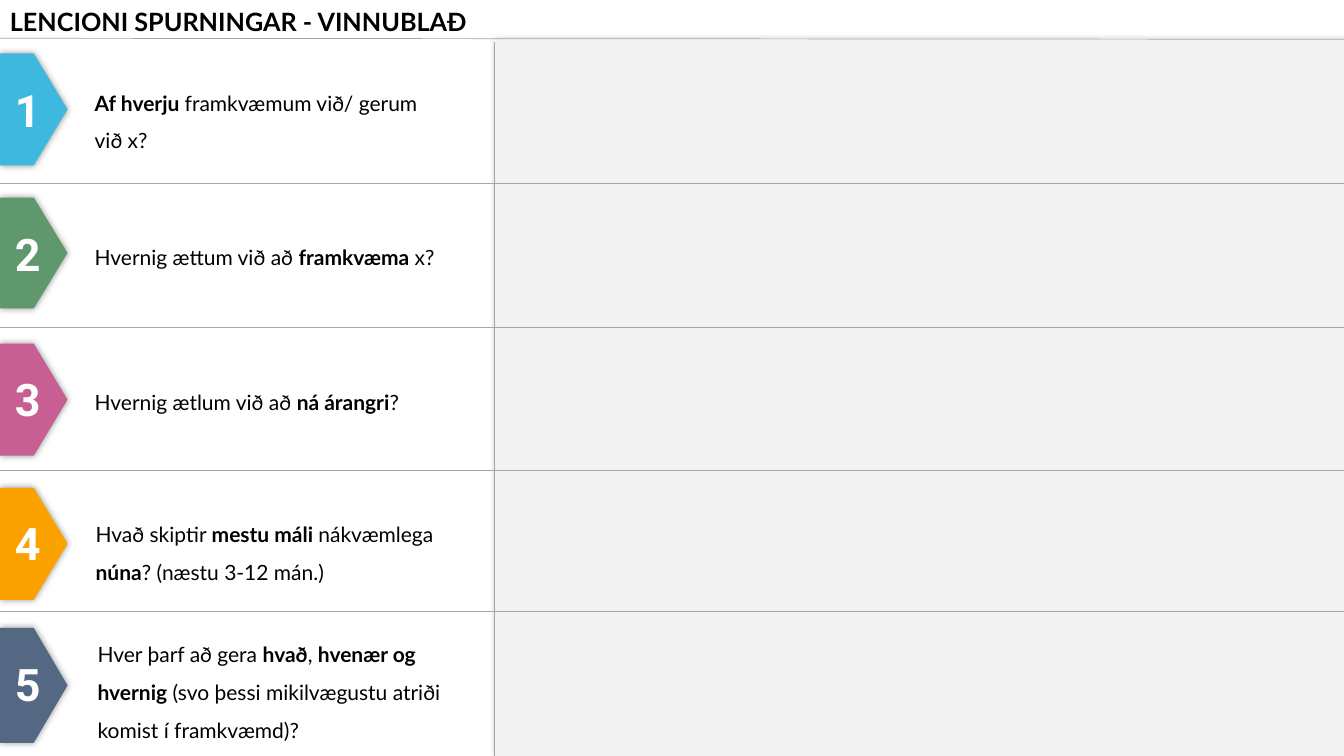
from dataclasses import dataclass

from lxml.etree import SubElement
from pptx import Presentation
from pptx.dml.color import RGBColor
from pptx.enum.shapes import MSO_CONNECTOR, MSO_SHAPE
from pptx.oxml.ns import qn
from pptx.shapes.autoshape import Shape
from pptx.slide import Slide
from pptx.text.text import _Paragraph as Paragraph
from pptx.util import Inches, Pt

BLACK = RGBColor(0x00, 0x00, 0x00)
WHITE = RGBColor(0xFF, 0xFF, 0xFF)
PANEL_GRAY = RGBColor(0xF2, 0xF2, 0xF2)
LINE_GRAY = RGBColor(0xA6, 0xA6, 0xA6)
BLUE = RGBColor(0x3E, 0xB8, 0xDE)
GREEN = RGBColor(0x60, 0x98, 0x6E)
PINK = RGBColor(0xC7, 0x5F, 0x93)
ORANGE = RGBColor(0xFB, 0xA2, 0x00)
SLATE = RGBColor(0x54, 0x67, 0x83)

SLIDE_WIDTH, SLIDE_HEIGHT = 13.33, 7.5
HEADER_BOTTOM = 0.38
ANSWER_LEFT = 4.9
ROW_LINES = (1.82, 3.25, 4.67, 6.07)
TAG_WIDTH = 0.67


@dataclass(frozen=True)
class Shadow:
    opacity: int
    blur: float
    distance: float
    angle: int


@dataclass(frozen=True)
class Question:
    """One worksheet row; asterisks in the text enclose bold words."""
    color: RGBColor
    tag_top: float
    tag_height: float
    number_top: float
    text_left: float
    text_top: float
    text_width: float
    text: str


PANEL_SHADOW = Shadow(30, 4, 2, 45)
TAG_SHADOW = Shadow(40, 5, 0, 0)

QUESTIONS = (
    Question(BLUE, 0.53, 1.11, 0.77, 0.84, 0.72, 3.41,
             "*Af hverju *framkvæmum við/ gerum við x?"),
    Question(GREEN, 1.96, 1.1, 2.2, 0.84, 2.25, 3.72,
             "Hvernig ættum við að *framkvæma *x?"),
    Question(PINK, 3.41, 1.11, 3.64, 0.84, 3.69, 3.42,
             "Hvernig ætlum við að *ná árangri*?"),
    Question(ORANGE, 4.84, 1.11, 5.07, 0.85, 5, 3.71,
             "Hvað skiptir *mestu máli *nákvæmlega *núna*? (næstu 3-12 mán.)"),
    Question(SLATE, 6.23, 1.14, 6.47, 0.87, 6.19, 3.86,
             "Hver þarf að gera *hvað*, *hvenær og hvernig* "
             "(svo þessi mikilvægustu atriði komist í framkvæmd)?"),
)


def add_shadow(shape: Shape, shadow: Shadow) -> None:
    shape.shadow.inherit = False
    effects = shape._element.spPr.find(qn("a:effectLst"))
    outer = SubElement(effects, qn("a:outerShdw"), {
        "blurRad": str(Pt(shadow.blur)),
        "dist": str(Pt(shadow.distance)),
        "dir": str(shadow.angle * 60000),
        "algn": "ctr",
        "rotWithShape": "0",
    })
    color = SubElement(outer, qn("a:srgbClr"), val=str(BLACK))
    SubElement(color, qn("a:alpha"), val=str(shadow.opacity * 1000))


def add_filled_shape(slide: Slide, kind: MSO_SHAPE, left: float, top: float, width: float,
                     height: float, color: RGBColor, shadow: Shadow) -> None:
    shape = slide.shapes.add_shape(kind, Inches(left), Inches(top), Inches(width), Inches(height))
    shape.fill.solid()
    shape.fill.fore_color.rgb = color
    shape.line.fill.background()
    add_shadow(shape, shadow)


def add_line(slide: Slide, x1: float, y1: float, x2: float, y2: float) -> None:
    line = slide.shapes.add_connector(
        MSO_CONNECTOR.STRAIGHT, Inches(x1), Inches(y1), Inches(x2), Inches(y2))
    line.line.color.rgb = LINE_GRAY
    line.line.width = Pt(0.5)
    SubElement(line._element.spPr, qn("a:effectLst"))


def add_text(slide: Slide, left: float, top: float, width: float, height: float, text: str,
             size: float, font_name: str, color: RGBColor) -> Paragraph:
    """Add a wrapped text box; words between asterisks become bold."""
    box = slide.shapes.add_textbox(Inches(left), Inches(top), Inches(width), Inches(height))
    box.text_frame.word_wrap = True
    paragraph = box.text_frame.paragraphs[0]
    font = paragraph.font
    font.size, font.name = Pt(size), font_name
    font.color.rgb = color
    for index, part in enumerate(text.split("*")):
        if part:
            run = paragraph.add_run()
            run.text = part
            run.font.bold = index % 2 == 1
    return paragraph


def add_question(slide: Slide, number: int, question: Question) -> None:
    add_filled_shape(slide, MSO_SHAPE.PENTAGON, 0, question.tag_top, TAG_WIDTH,
                     question.tag_height, question.color, TAG_SHADOW)
    add_text(slide, 0.05, question.number_top, 0.42, 0.64, f"*{number}*", 32, "Roboto", WHITE)
    paragraph = add_text(slide, question.text_left, question.text_top, question.text_width, 0.44,
                         question.text, 15, "Lato", BLACK)
    paragraph.line_spacing = 1.5


def main() -> None:
    presentation = Presentation()
    presentation.slide_width = Inches(SLIDE_WIDTH)
    presentation.slide_height = Inches(SLIDE_HEIGHT)
    slide = presentation.slides.add_slide(presentation.slide_layouts[6])

    add_filled_shape(slide, MSO_SHAPE.RECTANGLE, ANSWER_LEFT, HEADER_BOTTOM,
                     SLIDE_WIDTH - ANSWER_LEFT, SLIDE_HEIGHT - HEADER_BOTTOM,
                     PANEL_GRAY, PANEL_SHADOW)
    for y in ROW_LINES:
        add_line(slide, 0, y, SLIDE_WIDTH, y)
    add_line(slide, 0, HEADER_BOTTOM, SLIDE_WIDTH, 0.39)
    add_line(slide, ANSWER_LEFT, 0.42, ANSWER_LEFT, SLIDE_HEIGHT)

    for number, question in enumerate(QUESTIONS, start=1):
        add_question(slide, number, question)
    add_text(slide, 0, 0.01, 5.55, 0.4, "*LENCIONI SPURNINGAR - VINNUBLAÐ*", 18, "Lato", BLACK)

    presentation.save("out.pptx")


if __name__ == "__main__":
    main()
